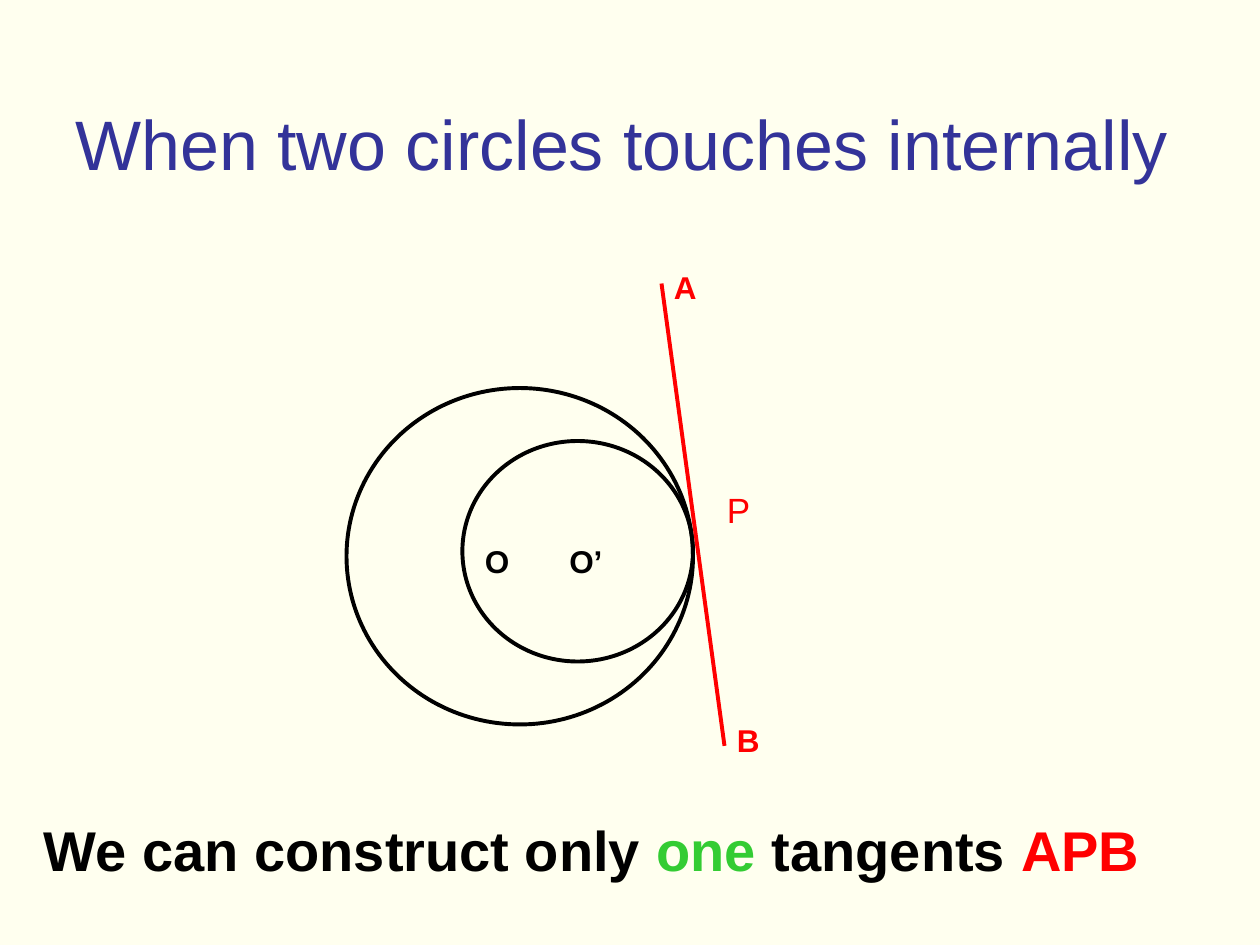
from typing import NamedTuple

from lxml.etree import SubElement
from pptx import Presentation
from pptx.dml.color import RGBColor
from pptx.enum.shapes import MSO_CONNECTOR as Connector, MSO_SHAPE as Shape
from pptx.enum.text import MSO_AUTO_SIZE as AutoSize
from pptx.oxml.ns import qn
from pptx.slide import Slide
from pptx.util import Inches, Pt

IVORY = RGBColor(0xFF, 0xFF, 0xEF)
BLACK = RGBColor(0x00, 0x00, 0x00)
RED = RGBColor(0xFF, 0x00, 0x00)
GREEN = RGBColor(0x33, 0xCC, 0x33)
INDIGO = RGBColor(0x33, 0x33, 0x99)
FONT = "Arial"
LINE_WIDTH = Pt(2.25)


class Circle(NamedTuple):
    left: float
    top: float
    width: float
    height: float


class Span(NamedTuple):
    text: str
    color: RGBColor


class Label(NamedTuple):
    spans: list[Span]
    left: float
    top: float
    width: float
    height: float
    size: int = 18
    bold: bool = True
    wrap: bool = True


CIRCLES = [Circle(2.75, 3.08, 2.75, 2.67), Circle(3.67, 3.5, 1.83, 1.75)]

LABELS = [
    # Ends of the tangent
    Label([Span("A", RED)], 5.25, 2.08, 0.38, 0.4, wrap=False),
    Label([Span("B", RED)], 5.75, 5.67, 0.38, 0.4, wrap=False),
    # Centres of the circles
    Label([Span("O", BLACK)], 3.75, 4.25, 0.38, 0.4),
    Label([Span("O’", BLACK)], 4.42, 4.25, 0.47, 0.4, wrap=False),
    # Title
    Label([Span("When two circles touches internally", INDIGO)],
          0.5, 0.75, 8.92, 0.77, size=40, bold=False),
    # Conclusion
    Label([Span("We can construct only ", BLACK), Span("one", GREEN),
           Span(" tangents ", BLACK), Span("APB", RED)],
          0.25, 6.42, 9.42, 0.63, size=32),
    # Point of contact
    Label([Span("P", RED)], 5.67, 3.83, 0.42, 0.43, size=20, bold=False),
]


def draw_circle(slide: Slide, circle: Circle) -> None:
    shape = slide.shapes.add_shape(Shape.OVAL, *map(Inches, circle))
    shape.shadow.inherit = False
    shape.fill.background()
    shape.line.color.rgb = BLACK
    shape.line.width = LINE_WIDTH


def draw_tangent(slide: Slide, start: tuple[float, float], end: tuple[float, float]) -> None:
    line = slide.shapes.add_connector(Connector.STRAIGHT, *map(Inches, start + end))
    line.line.color.rgb = RED
    line.line.width = LINE_WIDTH
    SubElement(line._element.spPr, qn("a:effectLst"))


def add_text(slide: Slide, spans: list[Span], *, left: float, top: float, width: float,
             height: float, size: int, bold: bool, wrap: bool) -> None:
    box = slide.shapes.add_textbox(*map(Inches, (left, top, width, height)))
    frame = box.text_frame
    frame.word_wrap = wrap
    frame.auto_size = AutoSize.SHAPE_TO_FIT_TEXT
    para = frame.paragraphs[0]
    for span in spans:
        run = para.add_run()
        run.text = span.text
        run.font.name = FONT
        run.font.size = Pt(size)
        run.font.bold = bold
        run.font.color.rgb = span.color


def main() -> None:
    deck = Presentation()
    deck.slide_width, deck.slide_height = Inches(10), Inches(7.5)
    slide = deck.slides.add_slide(deck.slide_layouts[6])
    slide.background.fill.solid()
    slide.background.fill.fore_color.rgb = IVORY

    # Circles and their common tangent
    for circle in CIRCLES:
        draw_circle(slide, circle)
    draw_tangent(slide, (5.25, 2.25), (5.75, 5.92))

    # Wording
    for label in LABELS:
        add_text(slide, **label._asdict())

    deck.save("out.pptx")


if __name__ == "__main__":
    main()
